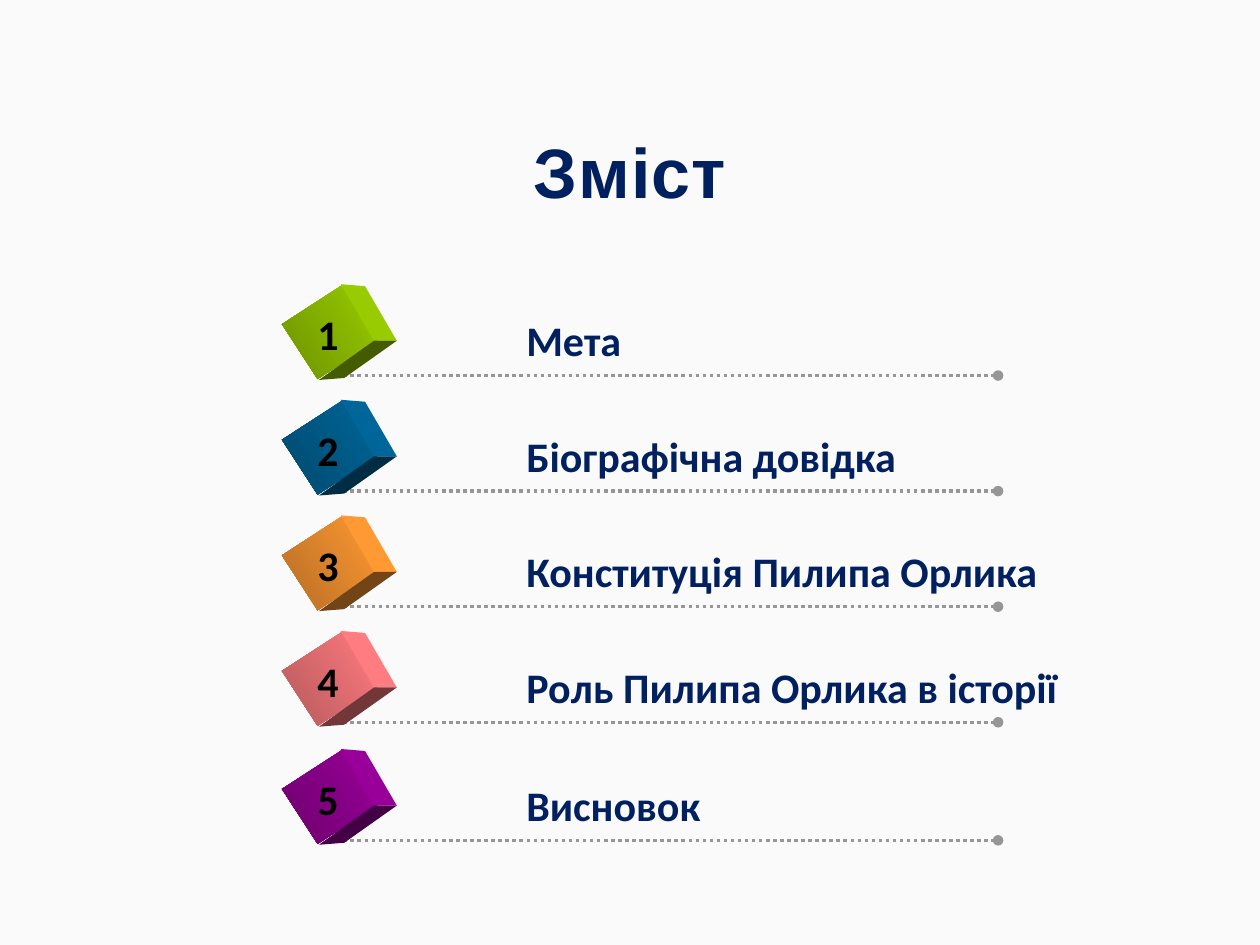
from lxml import etree
from pptx import Presentation
from pptx.dml.color import RGBColor
from pptx.enum import dml, shapes, text
from pptx.oxml.ns import qn
from pptx.util import Cm, Pt

TITLE = "Зміст"
# label, label width, rule height on the slide (cm), light and dark cube colours
ITEMS = [
    ("Мета", 2.44, 7.57, "99CC00", "6D9200"),
    ("Біографічна довідка", 8.05, 9.9, "006699", "00496D"),
    ("Конституція Пилипа Орлика", 10.92, 12.23, "FF9933", "B66D24"),
    ("Роль Пилипа Орлика в історії", 11.3, 14.56, "FF7C80", "B6595C"),
    ("Висновок", 4.06, 16.94, "990099", "6D006D"),
]
THEME = {
    "background": "FAFAFA", "heading": "002060", "number": "000000", "rule": "969696",
    "title_font": "Arial", "body_font": "Calibri", "title_size": 40, "body_size": 24,
    "shade": 0.45,
}
RULE_X = (6.78, 20.12)
# cube sides: x on the slide, y from the rule (cm)
RIGHT_SIDE = [(6.87, -1.84), (7.36, -1.8), (8.0, -0.7), (7.54, -0.7)]
LOWER_SIDE = [(7.54, -0.7), (8.0, -0.7), (6.94, 0.05), (6.43, 0.09)]


def rgb(value):
    return RGBColor.from_string(value)


def shaded(value):
    return RGBColor(*(int(part * THEME["shade"]) for part in rgb(value)))


def add_run(paragraph, words, font, size, color):
    run = paragraph.add_run()
    run.text = words
    run.font.name = font
    run.font.size = Pt(size)
    run.font.bold = True
    run.font.color.rgb = rgb(color)
    return run


def add_caption(group, words, left, top, width, color):
    caption = group.shapes.add_textbox(Cm(left), Cm(top), Cm(width), Cm(1.3))
    frame = caption.text_frame
    frame.word_wrap = False
    frame.auto_size = text.MSO_AUTO_SIZE.SHAPE_TO_FIT_TEXT
    add_run(frame.paragraphs[0], words, THEME["body_font"], THEME["body_size"], color)


def add_rule(group, y):
    """Dotted line that ends in a dot."""
    rule = group.shapes.add_connector(
        shapes.MSO_CONNECTOR.STRAIGHT, Cm(RULE_X[0]), Cm(y), Cm(RULE_X[1]), Cm(y))
    rule.line.color.rgb = rgb(THEME["rule"])
    rule.line.width = Pt(2)
    rule.line.dash_style = dml.MSO_LINE.ROUND_DOT
    properties = rule.element.spPr
    etree.SubElement(properties.find(qn("a:ln")), qn("a:tailEnd"), type="oval")
    etree.SubElement(properties, qn("a:effectLst"))


def add_side(group, corners, y, color):
    points = [(Cm(x), Cm(y + dy)) for x, dy in corners]
    builder = group.shapes.build_freeform(*points[0])
    builder.add_line_segments(points[1:], close=True)
    side = builder.convert_to_shape()
    side.shadow.inherit = False
    side.fill.solid()
    side.fill.fore_color.rgb = color
    side.line.fill.background()


def add_cube(group, y, light, dark):
    front = group.shapes.add_shape(
        shapes.MSO_SHAPE.RECTANGLE, Cm(5.99), Cm(y - 1.6), Cm(1.32), Cm(1.45))
    front.rotation = 57
    front.shadow.inherit = False
    front.line.fill.background()
    front.fill.gradient()
    front.fill.gradient_angle = 270
    for stop, color, position in zip(front.fill.gradient_stops, (light, dark), (0, 1)):
        stop.color.rgb = rgb(color)
        stop.position = position
    add_side(group, RIGHT_SIDE, y, rgb(light))
    add_side(group, LOWER_SIDE, y, shaded(light))


def add_title(slide):
    title = slide.shapes.title
    title.left, title.top, title.width, title.height = Cm(5.89), Cm(1.57), Cm(13.61), Cm(3.96)
    frame = title.text_frame
    frame.vertical_anchor = text.MSO_ANCHOR.MIDDLE
    frame.auto_size = text.MSO_AUTO_SIZE.NONE
    heading = frame.paragraphs[0]
    heading.alignment = text.PP_ALIGN.CENTER
    heading.line_spacing = 0.9
    run = add_run(heading, TITLE, THEME["title_font"], THEME["title_size"], THEME["heading"])
    run.font._element.set("spc", "50")


def main():
    deck = Presentation()
    deck.slide_width, deck.slide_height = Cm(25.4), Cm(19.05)
    slide = deck.slides.add_slide(deck.slide_layouts[5])
    slide.background.fill.solid()
    slide.background.fill.fore_color.rgb = rgb(THEME["background"])
    add_title(slide)
    for number, (label, width, y, light, dark) in enumerate(ITEMS, 1):
        row = slide.shapes.add_group_shape()
        add_rule(row, y)
        add_cube(row, y, light, dark)
        add_caption(row, label, 10.36, y - 1.35, width, THEME["heading"])
        add_caption(row, str(number), 6.15, y - 1.47, 0.94, THEME["number"])
    deck.save("out.pptx")


if __name__ == "__main__":
    main()
